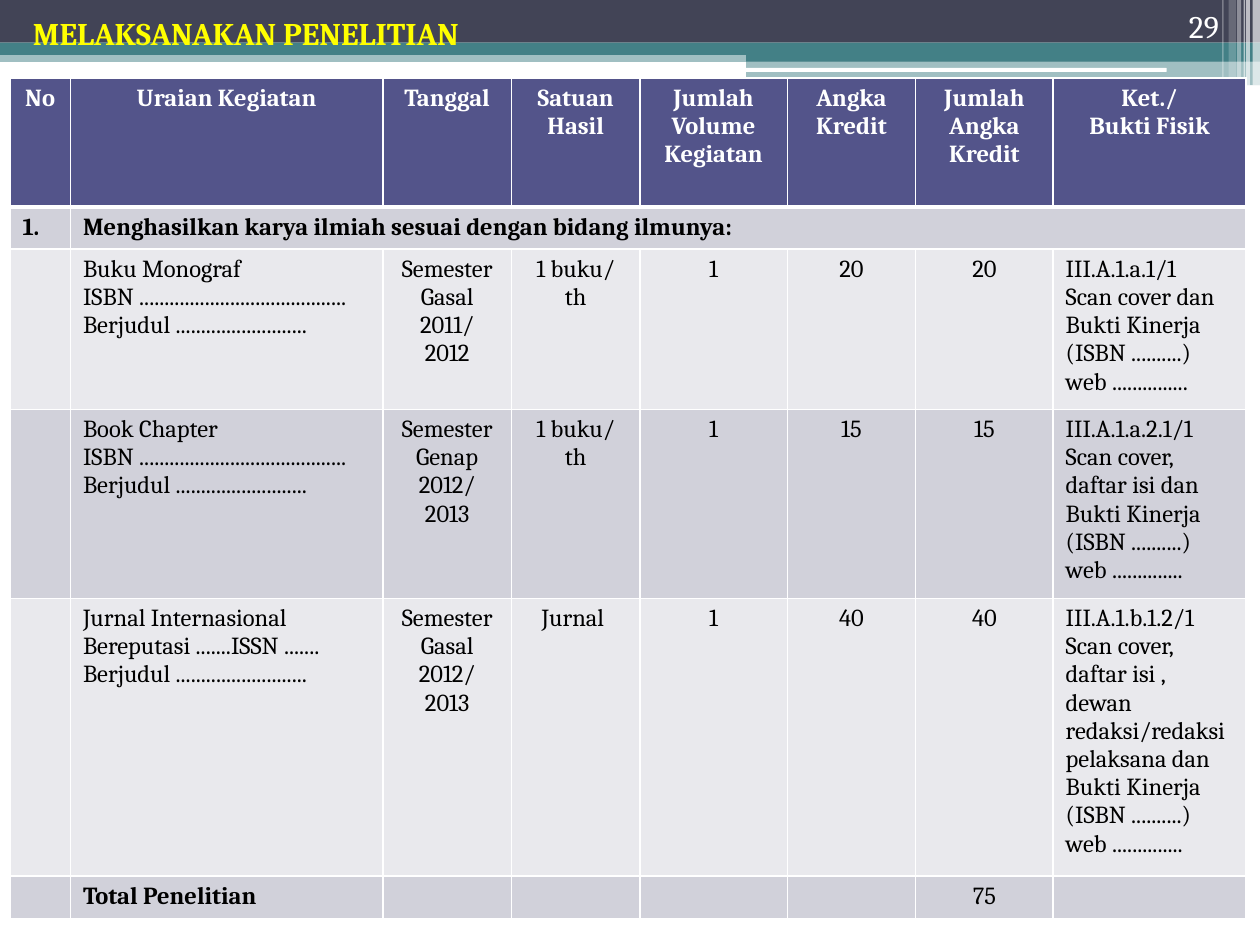
from lxml import etree
from pptx import Presentation
from pptx.dml.color import RGBColor
from pptx.enum.shapes import MSO_SHAPE
from pptx.enum.text import MSO_ANCHOR, PP_ALIGN
from pptx.oxml.ns import qn
from pptx.util import Cm, Pt

RECT, ROUND = MSO_SHAPE.RECTANGLE, MSO_SHAPE.ROUNDED_RECTANGLE
LEFT, CENTER, RIGHT = PP_ALIGN.LEFT, PP_ALIGN.CENTER, PP_ALIGN.RIGHT
TOP, BOTTOM = MSO_ANCHOR.TOP, MSO_ANCHOR.BOTTOM

HUES = {"dark": "424456", "teal": "438086", "white": "FFFFFF", "black": "000000",
        "yellow": "FFFF00", "head": "53548A", "odd": "D1D1DA", "even": "E9E9ED"}

# Bars of the banner: left, top, width, height (cm), colour, opacity, shape
BARS = [
    (0, 1.02, 25.4, 0.23, "teal", 50, RECT),
    (0, 0, 25.4, 0.86, "dark", 100, RECT),
    (0, 0.86, 25.4, 0.25, "teal", 100, RECT),
    (15.04, 0.99, 10.36, 0.25, "teal", 100, RECT),
    (15.04, 1.22, 10.36, 0.5, "teal", 50, RECT),
    (15.01, 1.37, 8.51, 0.08, "white", 100, ROUND),
    (20.47, 1.63, 4.45, 0.1, "white", 100, ROUND),
]
# Thin stripes at the right edge: left, width, height, opacity
STRIPES = [(25.25, 0.15, 1.73, 65), (25.12, 0.08, 1.73, 65), (25.07, 0.03, 1.73, 60),
           (24.94, 0.08, 1.73, 40), (24.77, 0.15, 1.63, 20), (24.64, 0.03, 1.63, 30)]

# Table: "\n" starts a paragraph, "|" breaks a line
COLS = [1.22, 6.3, 2.59, 2.59, 2.97, 2.59, 2.77, 3.89]
HEIGHTS = [2.6, 0.85, 3.23, 3.81, 5.6, 0.85]
ISBN = "|ISBN .........................................|"
TITLED = "Berjudul .........................."
ROWS = [
    ["No", "Uraian Kegiatan", "Tanggal", "Satuan Hasil", "Jumlah Volume Kegiatan",
     "Angka Kredit", "Jumlah Angka Kredit", "Ket./\nBukti Fisik"],
    ["1.", "Menghasilkan karya ilmiah sesuai dengan bidang ilmunya:"] + [""] * 6,
    ["", "Buku Monograf" + ISBN + TITLED, "Semester Gasal 2011/|2012", "1 buku/|th",
     "1", "20", "20",
     "III.A.1.a.1/1\nScan cover dan Bukti Kinerja (ISBN ..........) web ..............."],
    ["", "Book Chapter" + ISBN + TITLED, "Semester Genap 2012/|2013", "1 buku/|th",
     "1", "15", "15",
     "III.A.1.a.2.1/1\nScan cover, daftar isi dan Bukti Kinerja (ISBN ..........) "
     "web .............."],
    ["", "Jurnal Internasional Bereputasi .......ISSN ....... " + TITLED,
     "Semester Gasal 2012/|2013", "Jurnal ", "1", "40", "40",
     "III.A.1.b.1.2/1\nScan cover, daftar isi ,|dewan redaksi/redaksi pelaksana dan "
     "Bukti Kinerja (ISBN ..........) web .............."],
    ["", "Total Penelitian", "", "", "", "", "75", ""],
]


def tint(name):
    return RGBColor.from_string(HUES[name])


class Deck:
    font = "Cambria"

    def __init__(self):
        self.prs = Presentation()
        self.prs.slide_width, self.prs.slide_height = Cm(25.4), Cm(19.05)
        self.slide = self.prs.slides.add_slide(self.prs.slide_layouts[5])

    def bar(self, x, y, w, h, hue, alpha=100, kind=RECT):
        shape = self.slide.shapes.add_shape(kind, Cm(x), Cm(y), Cm(w), Cm(h))
        shape.shadow.inherit = False
        shape.fill.solid()
        shape.fill.fore_color.rgb = tint(hue)
        shape.line.fill.background()
        if alpha < 100:
            color = shape.fill._xPr.find(".//" + qn("a:srgbClr"))
            etree.SubElement(color, qn("a:alpha"), val=str(alpha * 1000))

    def put(self, frame, text, size, hue, bold=False, align=LEFT):
        frame.word_wrap = True
        for i, part in enumerate(text.split("\n")):
            para = frame.paragraphs[0] if i == 0 else frame.add_paragraph()
            para.alignment = align
            for j, line in enumerate(part.split("|") if part else []):
                if j:
                    para.add_line_break()
                run = para.add_run()
                run.text = line
                run.font.name, run.font.size = self.font, Pt(size)
                run.font.bold, run.font.color.rgb = bold, tint(hue)
            if not part:
                etree.SubElement(para._p, qn("a:endParaRPr"), sz=str(size * 100))

    def title(self, text, x, y, w, h):
        shape = self.slide.shapes.title
        shape.left, shape.top, shape.width, shape.height = Cm(x), Cm(y), Cm(w), Cm(h)
        shape.text_frame.vertical_anchor = TOP
        self.put(shape.text_frame, text, 18, "yellow", True)
        # Bring the title in front of the banner
        self.slide.shapes._spTree.append(shape._element)

    def label(self, text, x, y, w, h):
        frame = self.slide.shapes.add_textbox(Cm(x), Cm(y), Cm(w), Cm(h)).text_frame
        frame.vertical_anchor = BOTTOM
        self.put(frame, text, 18, "white", align=RIGHT)

    def edge(self, cell, side, width):
        line = etree.SubElement(cell._tc.get_or_add_tcPr(), qn("a:" + side),
                                w=str(Pt(width)))
        fill = etree.SubElement(line, qn("a:solidFill"))
        etree.SubElement(fill, qn("a:srgbClr"), val=HUES["white"])

    def table(self, x, y):
        grid = self.slide.shapes.add_table(len(ROWS), len(COLS), Cm(x), Cm(y),
                                           Cm(sum(COLS)), Cm(sum(HEIGHTS))).table
        for col, width in zip(grid.columns, COLS):
            col.width = Cm(width)
        for row, height in zip(grid.rows, HEIGHTS):
            row.height = Cm(height)
        grid.cell(1, 1).merge(grid.cell(1, 7))
        for r, texts in enumerate(ROWS):
            for c, text in enumerate(texts):
                cell = grid.cell(r, c)
                mid = r == 0 or 2 <= c <= 6
                bold = r < 2 or (r == 5 and c == 1)
                self.put(cell.text_frame, text, 14, "black" if r else "white",
                         bold, CENTER if mid else LEFT)
                # Borders go before the fill
                for side in ("lnL", "lnR", "lnT", "lnB"):
                    thick = (r, side) in ((0, "lnB"), (1, "lnT"))
                    self.edge(cell, side, 3 if thick else 1)
                cell.fill.solid()
                cell.fill.fore_color.rgb = tint(
                    "head" if r == 0 else "odd" if r % 2 else "even")


def main():
    deck = Deck()
    # Banner
    for bar in BARS:
        deck.bar(*bar)
    for x, w, h, alpha in STRIPES:
        deck.bar(x, 0, w, h, "white", alpha)
    # Page number and title
    deck.label("29", 22.71, 0, 2.11, 1.02)
    deck.title("MELAKSANAKAN PENELITIAN", 0.41, 0.15, 24.41, 1.02)
    # Credit table
    deck.table(0.2, 1.57)
    deck.prs.save("out.pptx")


if __name__ == "__main__":
    main()
